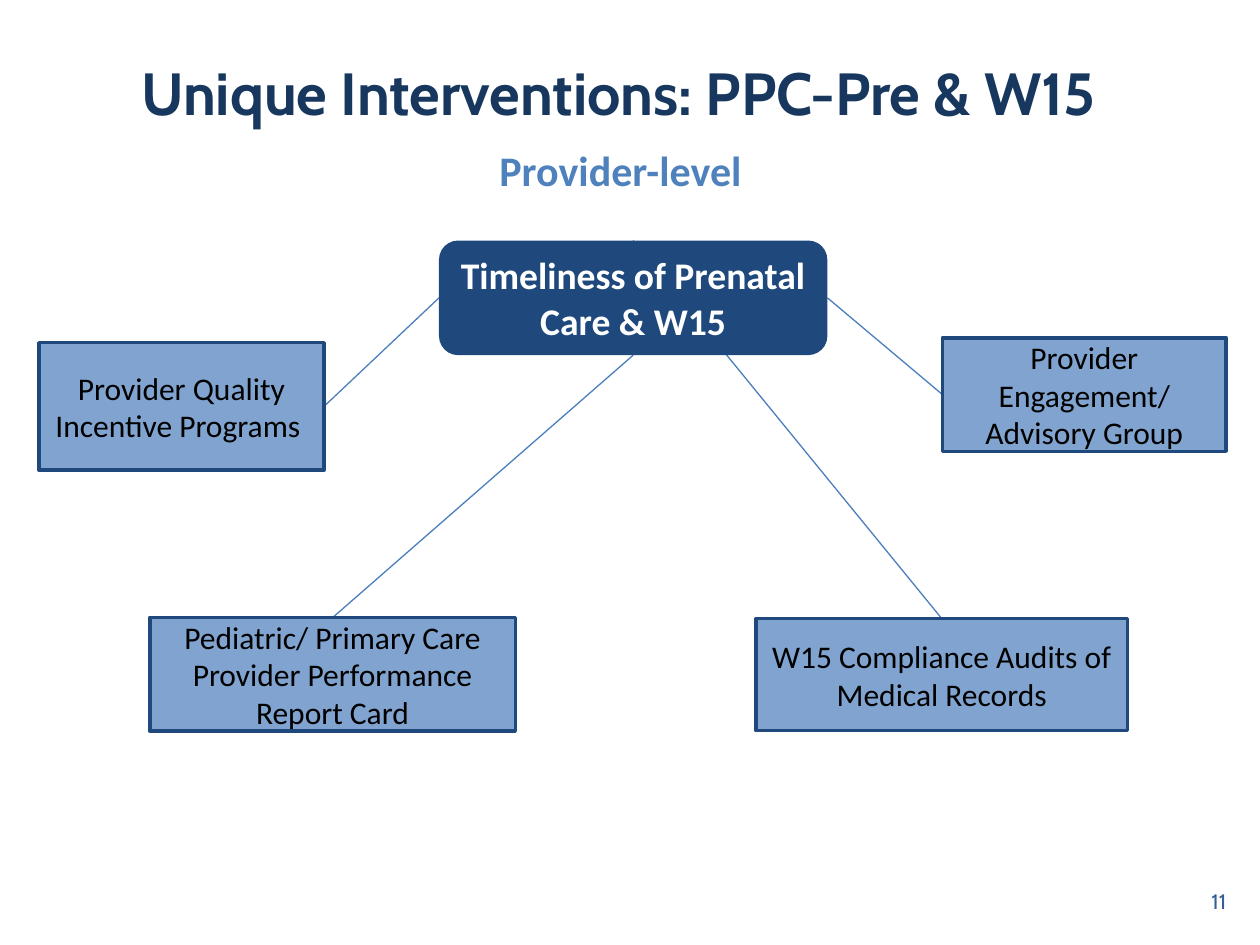
from dataclasses import dataclass

from pptx import Presentation
from pptx.dml.color import RGBColor
from pptx.enum.shapes import MSO_CONNECTOR as Link, MSO_SHAPE as Kind
from pptx.enum.text import MSO_ANCHOR as Anchor, PP_ALIGN as Align
from pptx.oxml.ns import qn
from pptx.shapes.autoshape import Shape
from pptx.slide import Slide
from pptx.util import Cm, Pt
from lxml.etree import SubElement

TOP, LEFT, BOTTOM, RIGHT = range(4)


@dataclass
class Label:
    text: str
    at: tuple[float, float, float, float]
    size: float
    color: str
    font: str = "Calibri"
    bold: bool = False
    align: Align = Align.CENTER
    anchor: Anchor = Anchor.MIDDLE
    wrap: bool = True


@dataclass
class Node:
    label: Label
    start: int
    end: int


def rgb(code: str) -> RGBColor:
    return RGBColor.from_string(code)


def write(shape: Shape, label: Label) -> None:
    frame = shape.text_frame
    frame.text = label.text
    frame.word_wrap = label.wrap
    frame.vertical_anchor = label.anchor
    line = frame.paragraphs[0]
    line.alignment = label.align
    font = line.runs[0].font
    font.name, font.size, font.bold = label.font, Pt(label.size), label.bold
    font.color.rgb = rgb(label.color)


def add_text(slide: Slide, label: Label) -> None:
    write(slide.shapes.add_textbox(*map(Cm, label.at)), label)


def add_box(slide: Slide, label: Label, kind: Kind, fill: str) -> Shape:
    box = slide.shapes.add_shape(kind, *map(Cm, label.at))
    box.shadow.inherit = False
    box.fill.solid()
    box.fill.fore_color.rgb = rgb(fill)
    box.line.fill.background()
    write(box, label)
    return box


def add_node(slide: Slide, hub: Shape, node: Node) -> None:
    box = add_box(slide, node.label, Kind.RECTANGLE, "4F81BD")
    tint = box.fill._xPr.find(qn("a:solidFill"))[0]
    SubElement(tint, qn("a:alpha"), val="72000")
    box.line.color.rgb = rgb("1F497D")
    box.line.width = Pt(2)
    join(slide, hub, box, node)


def join(slide: Slide, hub: Shape, box: Shape, node: Node) -> None:
    """Link the hub to a box with a line kept behind all the boxes."""
    line = slide.shapes.add_connector(Link.STRAIGHT, 0, 0, 0, 0)
    line.begin_connect(hub, node.start)
    line.end_connect(box, node.end)
    line.line.color.rgb = rgb("4B7EBC")
    line.line.width = Pt(0.75)
    SubElement(line._element.spPr, qn("a:effectLst"))
    slide.shapes._spTree.insert(2, line._element)


def item(text: str, *at: float) -> Label:
    return Label(text, at, 18, "000000")


TEXTS = [
    Label("Unique Interventions: PPC-Pre & W15", (0.64, 0.25, 23.67, 3.18),
          34, "17375E", "Cabin", True),
    Label("Provider-level", (9.78, 2.79, 5.46, 1.27), 24, "4F81BD",
          bold=True, anchor=Anchor.TOP, wrap=False),
    Label("11", (19.05, 17.65, 5.92, 1.02), 12, "376092", "Cabin",
          align=Align.RIGHT),
]
HUB = Label("Timeliness of Prenatal Care & W15", (8.85, 4.85, 7.83, 2.31),
            21.5, "FFFFFF", bold=True, anchor=Anchor.TOP)
NODES = [
    Node(item("Provider Engagement/ Advisory Group",
              19, 6.81, 5.72, 2.29), RIGHT, LEFT),
    Node(item("Pediatric/ Primary Care Provider Performance Report Card",
              3.02, 12.45, 7.37, 2.29), BOTTOM, TOP),
    Node(item("Provider Quality Incentive Programs ",
              0.79, 6.91, 5.74, 2.57), LEFT, RIGHT),
    Node(item("W15 Compliance Audits of Medical Records",
              15.24, 12.47, 7.49, 2.26), TOP, TOP),
]


def main() -> None:
    deck = Presentation()
    deck.slide_width, deck.slide_height = Cm(25.4), Cm(19.05)
    slide = deck.slides.add_slide(deck.slide_layouts[6])
    for label in TEXTS:
        add_text(slide, label)
    hub = add_box(slide, HUB, Kind.ROUNDED_RECTANGLE, "1F497D")
    for node in NODES:
        add_node(slide, hub, node)
    deck.save("out.pptx")


if __name__ == "__main__":
    main()
